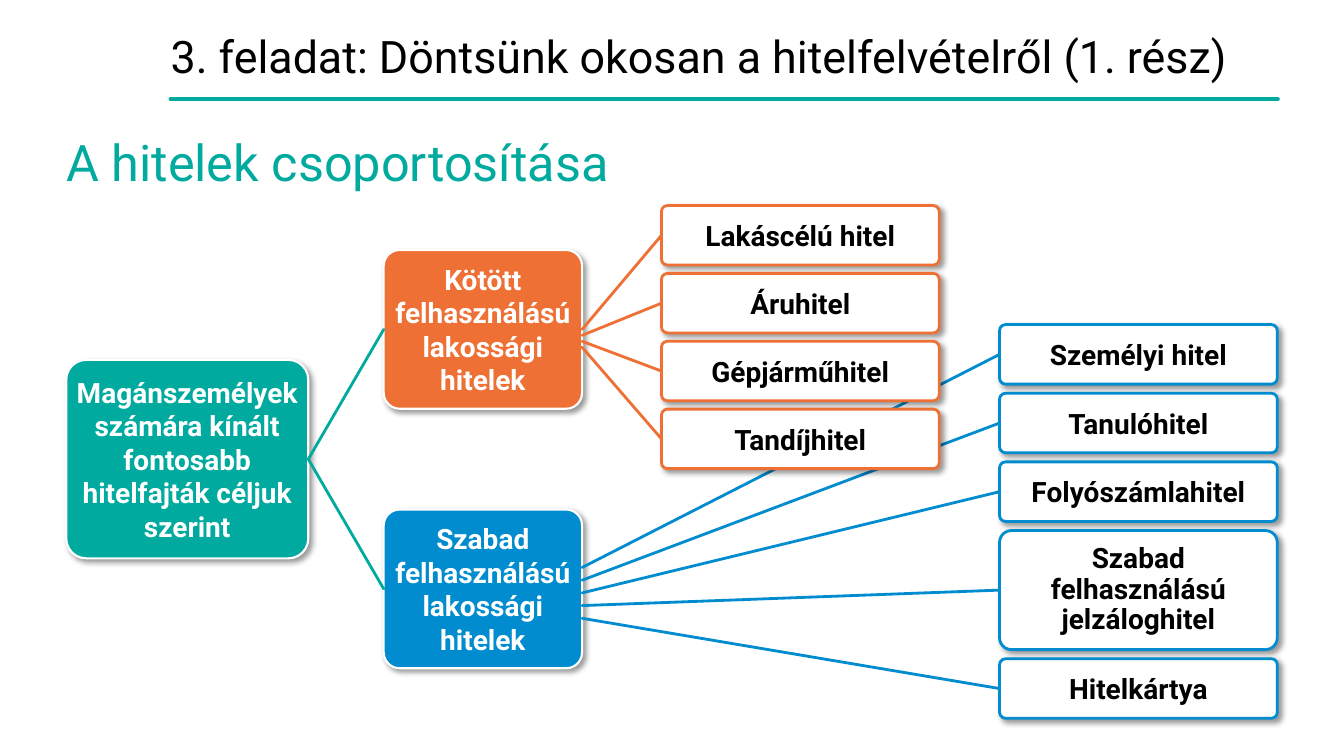
from dataclasses import dataclass

from lxml import etree
from pptx import Presentation
from pptx import util as u
from pptx.dml.color import RGBColor
from pptx.enum import shapes, text
from pptx.oxml import parse_xml
from pptx.oxml.ns import nsdecls, qn


@dataclass(frozen=True)
class Theme:
    font: str = "Roboto"
    teal: str = "00AA9F"
    orange: str = "EE7034"
    blue: str = "008CCF"
    white: str = "FFFFFF"
    black: str = "000000"
    title_size: int = 32
    subtitle_size: int = 36
    box_size: int = 20


@dataclass(frozen=True)
class Box:
    label: str
    left: float
    top: float
    width: float
    height: float
    fill: str
    line: str
    color: str
    line_width: float
    spacing: float = 1.0


@dataclass(frozen=True)
class Leaf:
    label: str
    height: float = 1.5
    spacing: float = 1.0


@dataclass(frozen=True)
class Branch:
    label: str
    top: float
    color: str
    leaf_left: float
    leaf_top: float
    leaf_gap: float
    fan_top: float
    fan_step: float
    leaves: tuple[Leaf, ...]


THEME = Theme()
BRANCH_LEFT, BRANCH_WIDTH, BRANCH_HEIGHT = 9.67, 5.0, 4.0
LEAF_WIDTH = 7.0
TOP, LEFT, RIGHT = 0, 1, 3

ROOT = Box("Magánszemélyek számára kínált fontosabb hitelfajták céljuk szerint",
           1.67, 9.07, 6.1, 5.0, THEME.teal, THEME.white, THEME.white, 1.5)
BRANCHES = (
    Branch("Szabad felhasználású lakossági hitelek", 12.84, THEME.blue,
           25.19, 8.18, 0.23, 14.3, 0.32,
           (Leaf("Személyi hitel"), Leaf("Tanulóhitel"), Leaf("Folyószámlahitel"),
            Leaf("Szabad felhasználású jelzáloghitel", 3.0, 0.9), Leaf("Hitelkártya"))),
    Branch("Kötött felhasználású lakossági hitelek", 6.3, THEME.orange,
           16.67, 5.18, 0.21, 8.3, 0.15,
           (Leaf("Lakáscélú hitel"), Leaf("Áruhitel"), Leaf("Gépjárműhitel"),
            Leaf("Tandíjhitel"))),
)


def style_text(tf, content: str, size: int, color: str, spacing: float, bold: bool = False):
    tf.word_wrap = True
    p = tf.paragraphs[0]
    p.text = content
    p.line_spacing = spacing
    p.font.name = THEME.font
    p.font.size = u.Pt(size)
    p.font.bold = bold
    p.font.color.rgb = RGBColor.from_string(color)
    return p


def set_margins(tf, margin: float) -> None:
    tf.margin_left = tf.margin_right = tf.margin_top = tf.margin_bottom = u.Cm(margin)


def add_heading(slide, content: str, left: float, top: float, width: float,
                size: int, color: str, anchor) -> None:
    tf = slide.shapes.add_textbox(u.Cm(left), u.Cm(top), u.Cm(width), u.Cm(1.3)).text_frame
    set_margins(tf, 0)
    tf.vertical_anchor = anchor
    style_text(tf, content, size, color, 0.9)


def add_line(slide, x1: float, y1: float, x2: float, y2: float, color: str, width: float):
    sp = slide.shapes.add_connector(shapes.MSO_CONNECTOR.STRAIGHT,
                                    u.Cm(x1), u.Cm(y1), u.Cm(x2), u.Cm(y2))
    sp.line.color.rgb = RGBColor.from_string(color)
    sp.line.width = u.Pt(width)
    sp.line._get_or_add_ln().set("cap", "rnd")
    etree.SubElement(sp._element.spPr, qn("a:effectLst"))
    return sp


def add_box(slide, box: Box):
    sp = slide.shapes.add_shape(shapes.MSO_SHAPE.ROUNDED_RECTANGLE, u.Cm(box.left),
                                u.Cm(box.top), u.Cm(box.width), u.Cm(box.height))
    sp.adjustments[0] = 0.1
    sp.fill.solid()
    sp.fill.fore_color.rgb = RGBColor.from_string(box.fill)
    sp.line.color.rgb = RGBColor.from_string(box.line)
    sp.line.width = u.Pt(box.line_width)
    sp._element.spPr.append(parse_xml(
        f'<a:effectLst {nsdecls("a")}><a:outerShdw blurRad="{u.Pt(4)}" dist="{u.Pt(3)}" '
        f'dir="2700000" algn="tl" rotWithShape="0"><a:srgbClr val="{THEME.black}">'
        '<a:alpha val="40000"/></a:srgbClr></a:outerShdw></a:effectLst>'))
    tf = sp.text_frame
    set_margins(tf, 0.05)
    tf.vertical_anchor = text.MSO_ANCHOR.MIDDLE
    p = style_text(tf, box.label, THEME.box_size, box.color, box.spacing, bold=True)
    p.alignment = text.PP_ALIGN.CENTER
    return sp


def add_branch(slide, branch: Branch, root) -> None:
    parent = add_box(slide, Box(branch.label, BRANCH_LEFT, branch.top, BRANCH_WIDTH,
                                BRANCH_HEIGHT, branch.color, THEME.white, THEME.white, 1.5))
    stem = add_line(slide, 0, 0, 1, 1, THEME.teal, 2)
    stem.begin_connect(root, RIGHT)
    stem.end_connect(parent, LEFT)
    top = branch.leaf_top
    for i, leaf in enumerate(branch.leaves):
        twig = add_line(slide, BRANCH_LEFT + BRANCH_WIDTH, branch.fan_top + i * branch.fan_step,
                        branch.leaf_left, top, branch.color, 2)
        child = add_box(slide, Box(leaf.label, branch.leaf_left, top, LEAF_WIDTH, leaf.height,
                                   THEME.white, branch.color, THEME.black, 2, leaf.spacing))
        twig.end_connect(child, LEFT)
        top += leaf.height + branch.leaf_gap


def main() -> None:
    prs = Presentation()
    prs.slide_width, prs.slide_height = u.Cm(33.87), u.Cm(19.05)
    slide = prs.slides.add_slide(prs.slide_layouts[6])
    add_line(slide, 4.3, 2.5, 32.2, 2.5, THEME.teal, 3)
    add_heading(slide, "3. feladat: Döntsünk okosan a hitelfelvételről (1. rész)",
                4.3, 0.84, 27.9, THEME.title_size, THEME.black, text.MSO_ANCHOR.MIDDLE)
    add_heading(slide, "A hitelek csoportosítása",
                1.67, 3.48, 30.5, THEME.subtitle_size, THEME.teal, text.MSO_ANCHOR.TOP)
    root = add_box(slide, ROOT)
    for branch in BRANCHES:
        add_branch(slide, branch, root)
    prs.save("out.pptx")


if __name__ == "__main__":
    main()
